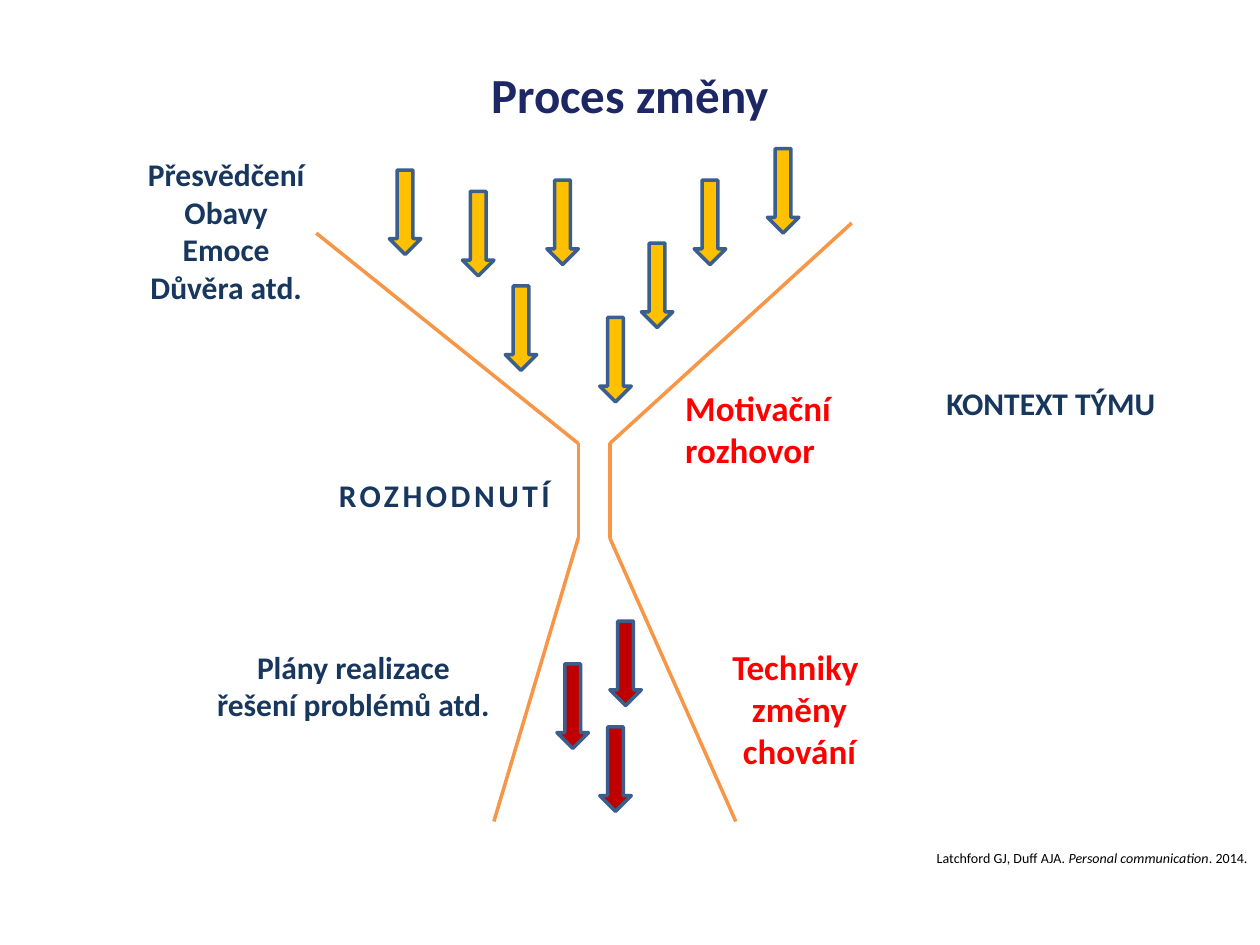
from itertools import pairwise

from lxml.etree import SubElement
from pptx import Presentation
from pptx.dml.color import RGBColor
from pptx.enum.shapes import MSO_CONNECTOR, MSO_SHAPE
from pptx.enum.text import MSO_ANCHOR, PP_ALIGN
from pptx.oxml.ns import qn
from pptx.util import Inches, Pt

FONT = "Calibri"
COLORS = {
    "title": "1D2763",
    "label": "17375E",
    "method": "FF0000",
    "source": "000000",
    "funnel": "F79646",
    "belief": "FFC000",
    "plan": "C00000",
    "outline": "3A5F8C",
}

FUNNEL_SIDES = [
    [(2.51, 1.85), (4.59, 3.52), (4.59, 4.27), (3.92, 6.52)],
    [(6.76, 1.77), (4.84, 3.52), (4.84, 4.27), (5.84, 6.52)],
]
ARROW_SIZE = (0.25, 0.67)
ARROWS = {
    "belief": [(3.09, 1.35), (3.67, 1.52), (4.01, 2.27), (4.34, 1.43),
               (4.76, 2.52), (5.51, 1.43), (5.09, 1.93), (6.09, 1.18)],
    "plan": [(4.42, 5.27), (4.76, 5.77), (4.84, 4.93)],
}


def rgb(name):
    return RGBColor.from_string(COLORS[name])


def add_line(s, start, end):
    line = s.shapes.add_connector(
        MSO_CONNECTOR.STRAIGHT, *(Inches(v) for v in start + end))
    line.line.color.rgb = rgb("funnel")
    line.line.width = Pt(2)
    SubElement(line._element.spPr, qn("a:effectLst"))


def add_arrow(s, position, color):
    sp = s.shapes.add_shape(
        MSO_SHAPE.DOWN_ARROW, *(Inches(v) for v in position + ARROW_SIZE))
    sp.shadow.inherit = False
    sp.fill.solid()
    sp.fill.fore_color.rgb = rgb(color)
    sp.line.color.rgb = rgb("outline")
    sp.line.width = Pt(2)


def add_text(s, box, lines, size, color, align=PP_ALIGN.CENTER, bold=True,
             anchor=MSO_ANCHOR.TOP):
    """Add a text box with one paragraph per line and return its text frame."""
    tf = s.shapes.add_textbox(*(Inches(v) for v in box)).text_frame
    tf.word_wrap = True
    tf.vertical_anchor = anchor
    tf.text = "\n".join(lines)
    for p in tf.paragraphs:
        p.alignment = align
        for r in p.runs:
            style_run(r, size, color, bold)
    return tf


def style_run(r, size, color, bold):
    r.font.name = FONT
    r.font.size = Pt(size)
    r.font.bold = bold
    r.font.color.rgb = rgb(color)


def add_source(s):
    tf = add_text(s, (-0.01, 6.69, 10.01, 0.24), ["Latchford GJ, Duff AJA. "],
                  8, "source", PP_ALIGN.RIGHT, bold=False)
    for text, italic in [("Personal communication", True), (". 2014.", False)]:
        r = tf.paragraphs[0].add_run()
        r.text = text
        style_run(r, 8, "source", False)
        r.font.italic = italic


def main():
    prs = Presentation()
    prs.slide_width, prs.slide_height = Inches(10), Inches(7.5)
    s = prs.slides.add_slide(prs.slide_layouts[6])

    add_text(s, (0.5, 0.32, 9, 0.85), ["Proces změny"], 28, "title",
             anchor=MSO_ANCHOR.MIDDLE)
    for side in FUNNEL_SIDES:
        for start, end in pairwise(side):
            add_line(s, start, end)

    add_text(s, (5.34, 3.02, 1.73, 0.77), ["Motivační rozhovor"], 20, "method",
             PP_ALIGN.LEFT)
    decision = add_text(s, (2.59, 3.73, 2.09, 0.4), ["ROZHODNUTÍ"], 18, "label",
                        PP_ALIGN.LEFT)
    decision.paragraphs[0].runs[0]._r.get_or_add_rPr().set("spc", "200")
    add_text(s, (5.16, 5.07, 2.37, 1.1), ["Techniky ", "změny", "chování"],
             20, "method")

    for color, positions in ARROWS.items():
        for position in positions:
            add_arrow(s, position, color)

    add_text(s, (1.6, 5.09, 2.41, 0.71),
             ["Plány realizace řešení problémů atd. "], 18, "label")
    add_text(s, (-0.08, 1.18, 3.75, 1.3),
             ["Přesvědčení", "Obavy", "Emoce", "Důvěra atd."], 18, "label")
    add_text(s, (7.32, 3, 2.04, 0.4), ["KONTEXT TÝMU"], 18, "label")
    add_source(s)
    prs.save("out.pptx")


if __name__ == "__main__":
    main()
